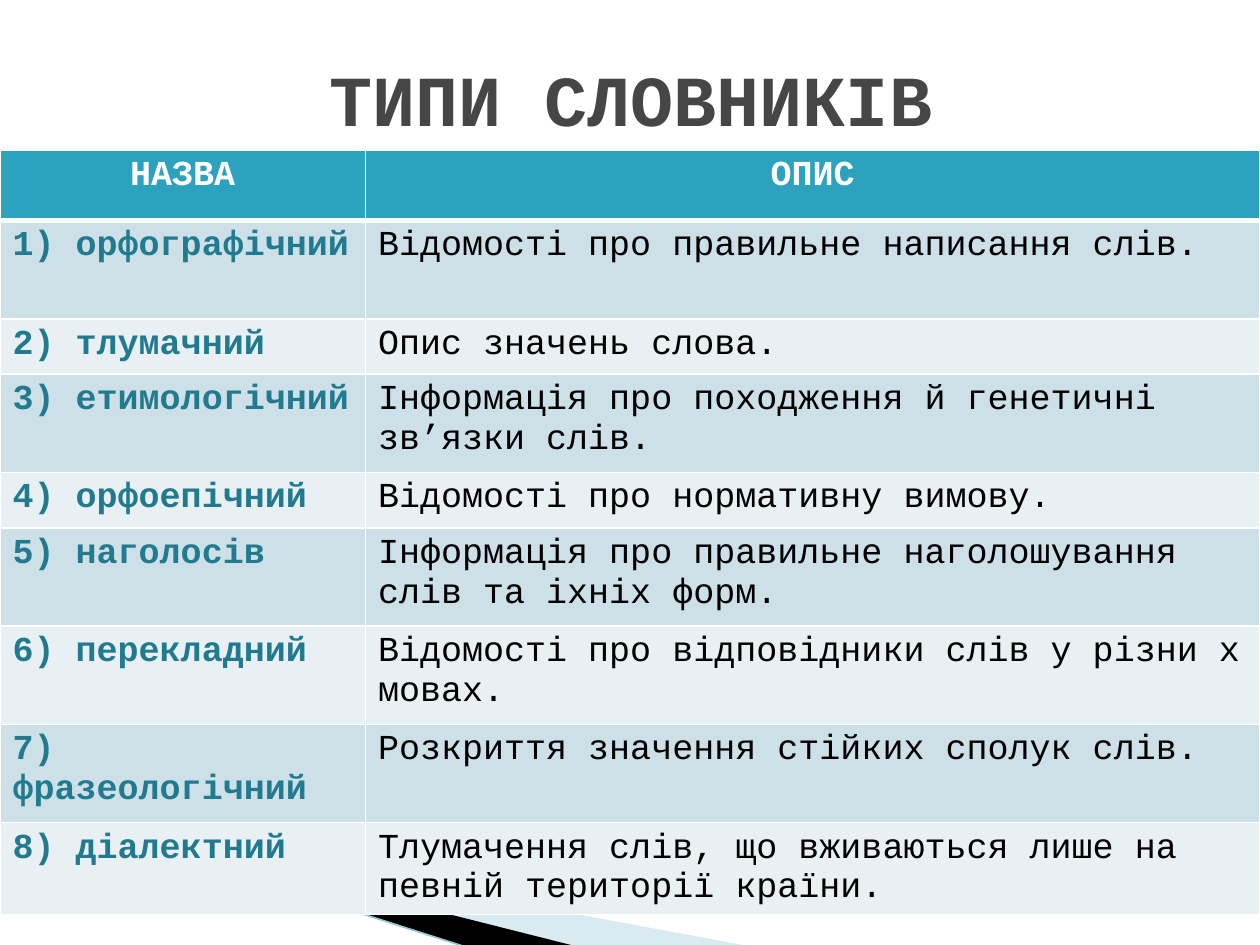
from typing import NamedTuple

from lxml import etree
from pptx import Presentation
from pptx import util as u
from pptx.dml.color import RGBColor
from pptx.enum import shapes as sh
from pptx.enum import text as tx
from pptx.oxml.ns import qn

FONT = "Courier New"
WHITE, BLACK, TEAL, DARK_TEAL = "FFFFFF", "000000", "2DA2BF", "227A8F"
BANDS = ("CDE0E8", "E8F0F4")


class Dictionary(NamedTuple):
    name: str
    description: str
    height: float


class Wedge(NamedTuple):
    points: tuple[tuple[float, float], ...]
    color: str
    opacity: int


DICTIONARIES = [
    Dictionary("орфографічний", "Відомості про правильне написання слів.", 0.78),
    Dictionary("тлумачний", "Опис значень слова.", 0.44),
    Dictionary("етимологічний", "Інформація про походження й генетичні зв’язки слів.", 0.78),
    Dictionary("орфоепічний", "Відомості про нормативну вимову.", 0.44),
    Dictionary("наголосів", "Інформація про правильне наголошування слів та іхніх форм.", 0.78),
    Dictionary("перекладний", "Відомості про відповідники слів у різни х мовах.", 0.78),
    Dictionary("фразеологічний", "Розкриття значення стійких сполук слів.", 0.78),
    Dictionary("діалектний",
               "Тлумачення слів, що вживаються лише на певній території країни.", 0.57),
]
WEDGES = [
    Wedge(((0.55, 6.51), (5.95, 7.51), (4.56, 7.51), (0.55, 6.5)), "A0CBDC", 40),
    Wedge(((0.53, 6.49), (4.57, 7.51), (3.72, 7.52), (0.54, 6.5)), BLACK, 100),
]


def rgb(color: str) -> RGBColor:
    return RGBColor.from_string(color)


def add_text(frame, content: str, size: float, color: str, bold: bool, centred: bool) -> None:
    paragraph = frame.paragraphs[0]
    paragraph.alignment = tx.PP_ALIGN.CENTER if centred else tx.PP_ALIGN.LEFT
    run = paragraph.add_run()
    run.text = content
    run.font.name, run.font.size, run.font.bold = FONT, u.Pt(size), bold
    run.font.color.rgb = rgb(color)


def add_wedge(slide, wedge: Wedge) -> None:
    start, *rest = [(u.Inches(x), u.Inches(y)) for x, y in wedge.points]
    builder = slide.shapes.build_freeform(*start)
    builder.add_line_segments(rest, close=True)
    shape = builder.convert_to_shape()
    shape.shadow.inherit = False
    shape.line.fill.background()
    shape.fill.solid()
    shape.fill.fore_color.rgb = rgb(wedge.color)
    if wedge.opacity < 100:
        color = shape.fill._xPr.find(".//" + qn("a:srgbClr"))
        etree.SubElement(color, qn("a:alpha"), val=str(wedge.opacity * 1000))


def add_edge_line(slide) -> None:
    edge = slide.shapes.add_connector(
        sh.MSO_CONNECTOR.STRAIGHT,
        u.Inches(-0.01), u.Inches(6.33), u.Inches(3.71), u.Inches(7.52))
    edge.line.color.rgb = rgb("97C5D8")
    edge.line.width = u.Pt(0.95)
    etree.SubElement(edge._element.spPr, qn("a:effectLst"))


def style_cell(cell, fill: str, top: float, bottom: float) -> None:
    """Fill a cell and give it white borders; top and bottom are widths in points."""
    cell.fill.solid()
    cell.fill.fore_color.rgb = rgb(fill)
    properties = cell._tc.get_or_add_tcPr()
    borders = {"lnL": 1, "lnR": 1, "lnT": top, "lnB": bottom}
    for position, (tag, width) in enumerate(borders.items()):
        line = etree.Element(qn(f"a:{tag}"), w=str(u.Pt(width)))
        solid = etree.SubElement(line, qn("a:solidFill"))
        etree.SubElement(solid, qn("a:srgbClr"), val=WHITE)
        properties.insert(position, line)


def add_dictionary_table(slide) -> None:
    heights = [0.56] + [entry.height for entry in DICTIONARIES]
    table = slide.shapes.add_table(
        len(heights), 2, u.Inches(0), u.Inches(1.19),
        u.Inches(10), u.Inches(sum(heights))).table
    for column, width in zip(table.columns, (2.9, 7.1)):
        column.width = u.Inches(width)
    for row, height in zip(table.rows, heights):
        row.height = u.Inches(height)

    for cell, heading in zip(table.rows[0].cells, ("НАЗВА", "ОПИС")):
        style_cell(cell, TEAL, top=1, bottom=3)
        add_text(cell.text_frame, heading, 20, WHITE, bold=True, centred=True)
    for number, entry in enumerate(DICTIONARIES, start=1):
        name, description = table.rows[number].cells
        for cell in (name, description):
            style_cell(cell, BANDS[(number - 1) % 2], top=3 if number == 1 else 1, bottom=1)
        add_text(name.text_frame, f"{number}) {entry.name}", 20, DARK_TEAL,
                 bold=True, centred=False)
        add_text(description.text_frame, entry.description, 20, BLACK,
                 bold=False, centred=False)


def add_title(slide) -> None:
    """Fill the title placeholder and bring it in front of the table."""
    title = slide.shapes.title
    title.left, title.top = u.Inches(0.51), u.Inches(0)
    title.width, title.height = u.Inches(9), u.Inches(1.55)
    title.text_frame.vertical_anchor = tx.MSO_ANCHOR.MIDDLE
    add_text(title.text_frame, "ТИПИ СЛОВНИКІВ", 41, "464646", bold=True, centred=True)
    slide.shapes._spTree.append(title._element)


def main() -> None:
    deck = Presentation()
    deck.slide_width, deck.slide_height = u.Inches(10), u.Inches(7.5)
    slide = deck.slides.add_slide(deck.slide_layouts[5])
    for wedge in WEDGES:
        add_wedge(slide, wedge)
    add_edge_line(slide)
    add_dictionary_table(slide)
    add_title(slide)
    deck.save("out.pptx")


if __name__ == "__main__":
    main()
